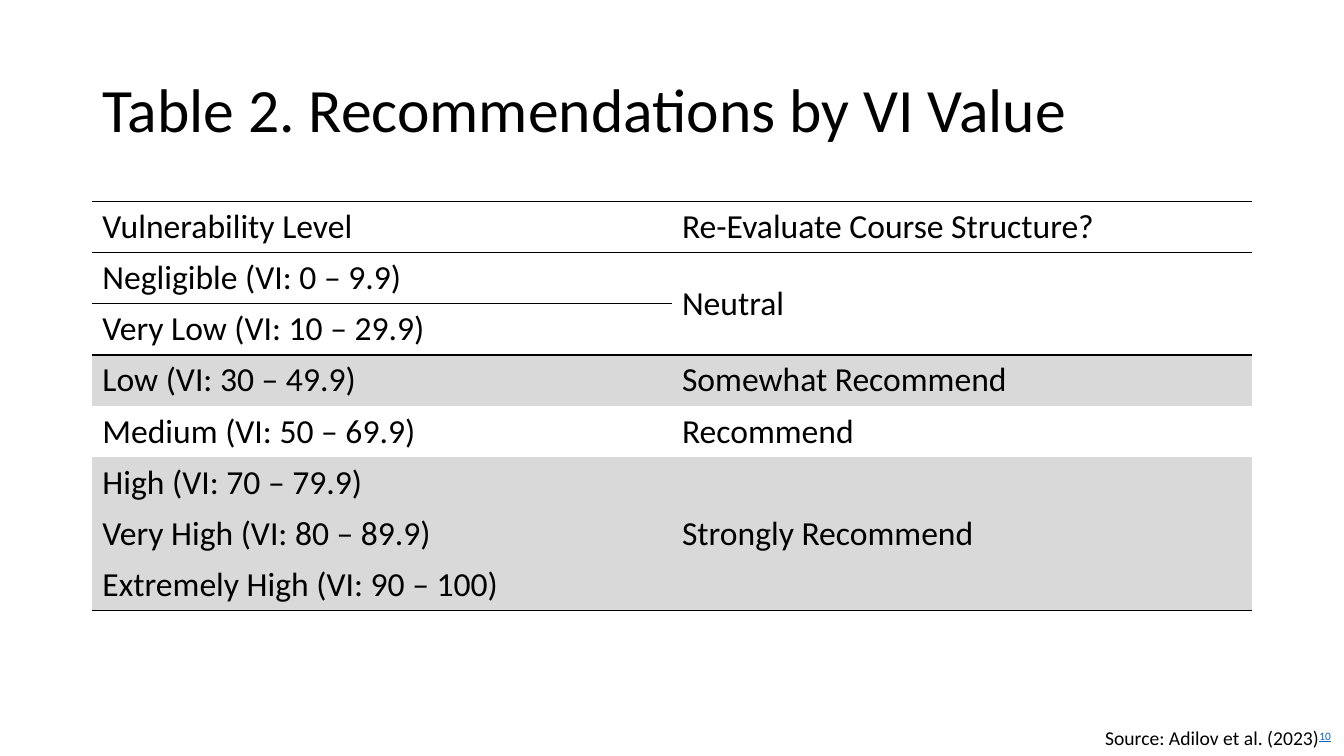
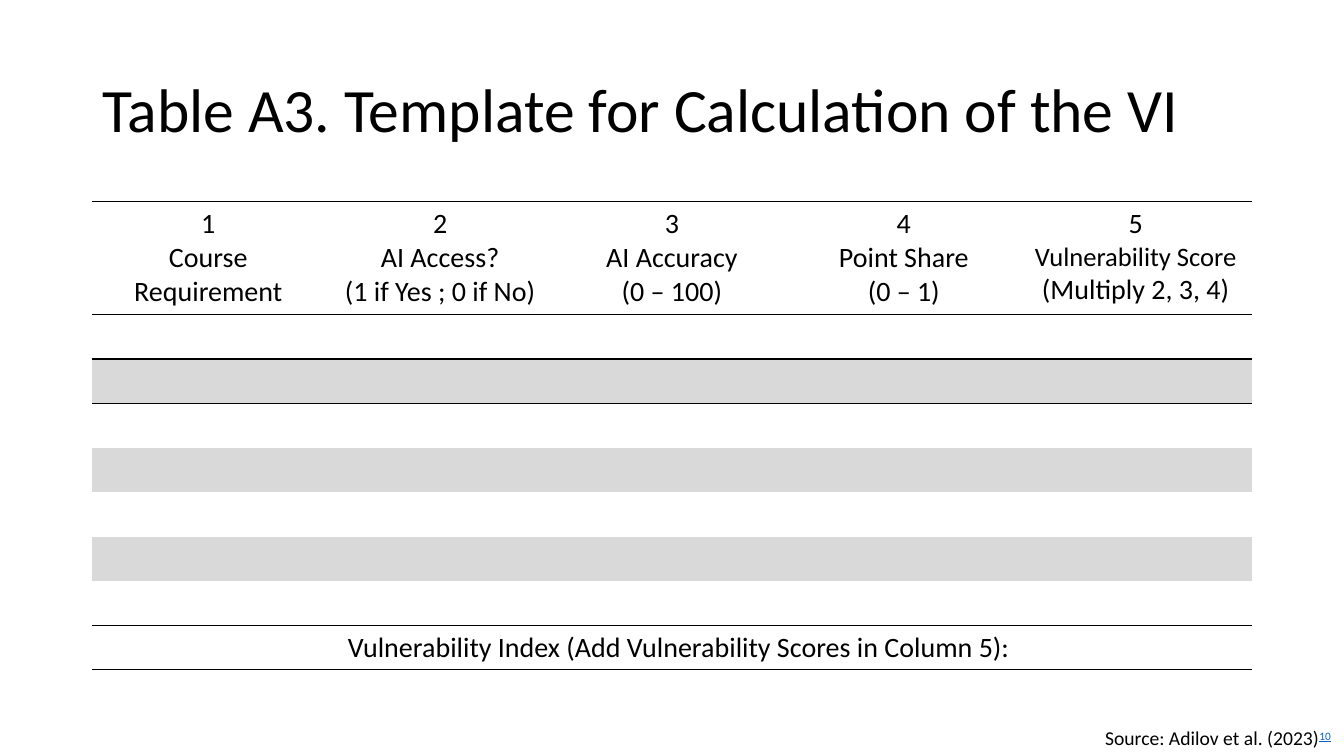
import lxml.etree
import pptx
import pptx.dml.color
import pptx.enum.text
import pptx.oxml.ns
import pptx.util

PX = 9525
BLACK = pptx.dml.color.RGBColor(0x00, 0x00, 0x00)
GREY = pptx.dml.color.RGBColor(0xD9, 0xD9, 0xD9)
BLUE = pptx.dml.color.RGBColor(0x05, 0x63, 0xC1)
FONT = "Calibri"
PLAIN_STYLE = "{2D5ABB26-0587-4C30-8999-92F81FD0307C}"
ALIGN = pptx.enum.text.PP_ALIGN
MIDDLE = pptx.enum.text.MSO_ANCHOR.MIDDLE
FIT = pptx.enum.text.MSO_AUTO_SIZE

TITLE_BOX = (88, 38, 1104, 139)
TABLE_LEFT, TABLE_TOP, TABLE_WIDTH = 88, 192, 1104
SOURCE_BOX = (1043, 687, 238, 33)

LEVELS = [
    ("Vulnerability Level", "Re-Evaluate Course Structure?"),
    ("Negligible (VI: 0 – 9.9)", "Neutral"),
    ("Very Low (VI: 10 – 29.9)", ""),
    ("Low (VI: 30 – 49.9)", "Somewhat Recommend"),
    ("Medium (VI: 50 – 69.9)", "Recommend"),
    ("High (VI: 70 – 79.9)", "Strongly Recommend"),
    ("Very High (VI: 80 – 89.9)", ""),
    ("Extremely High (VI: 90 – 100)", ""),
]
HEADS = (
    "1\nCourse Requirement",
    "2\nAI Access?\n(1 if Yes ; 0 if No)",
    "3\nAI Accuracy\n(0 – 100)",
    "4\nPoint Share\n(0 – 1)",
    "5\nVulnerability Score ",
)
BLANK = ("",) * len(HEADS)
TOTAL = ("Vulnerability Index (Add Vulnerability Scores in Column 5):",) + BLANK[1:]


def scale(box):
    return [n * PX for n in box]


def style(para, size, align=ALIGN.LEFT):
    para.alignment = align
    font = para.font
    font.name = FONT
    font.size = pptx.util.Pt(size)
    font.color.rgb = BLACK


def add_title(slide, box, text):
    title = slide.shapes.title
    title.left, title.top, title.width, title.height = scale(box)
    frame = title.text_frame
    frame.text = text
    frame.auto_size = FIT.NONE
    frame.vertical_anchor = MIDDLE
    para = frame.paragraphs[0]
    para.line_spacing = 0.9
    style(para, 44)


def add_source(slide, box):
    frame = slide.shapes.add_textbox(*scale(box)).text_frame
    frame.word_wrap = False
    frame.auto_size = FIT.SHAPE_TO_FIT_TEXT
    para = frame.paragraphs[0]
    style(para, 14)
    para.add_run().text = "Source: Adilov et al. (2023)"
    note = para.add_run()
    note.text = "10"
    note.font.underline = True
    note.font.color.rgb = BLUE
    note.font._element.set("baseline", "30000")


def add_rule(cell, side):
    """Draw a black 1 pt border; side is lnT or lnB."""
    name = pptx.oxml.ns.qn
    props = cell._tc.get_or_add_tcPr()
    line = lxml.etree.SubElement(props, name("a:" + side), w=str(pptx.util.Pt(1)))
    fill = lxml.etree.SubElement(line, name("a:solidFill"))
    lxml.etree.SubElement(fill, name("a:srgbClr"), val=str(BLACK))


def add_table(slide, box, rows, heights, size, align, shaded, ruled, merges):
    """Fill a grid; shaded rows are grey, ruled rows have a line below."""
    left, top, width = scale(box)
    count = len(rows[0])
    table = slide.shapes.add_table(
        len(rows), count, left, top, width, sum(heights) * PX).table
    table.first_row = table.horz_banding = False
    table._tbl.tblPr.find(pptx.oxml.ns.qn("a:tableStyleId")).text = PLAIN_STYLE
    for col in table.columns:
        col.width = width // count
    for row, height in zip(table.rows, heights):
        row.height = height * PX
    for first, last in merges:
        table.cell(*first).merge(table.cell(*last))
    for r, texts in enumerate(rows):
        for c, text in enumerate(texts):
            cell = table.cell(r, c)
            cell.text = text
            for para in cell.text_frame.paragraphs:
                style(para, size, align)
            tall = cell.span_height if cell.is_merge_origin else 1
            if tall > 1:
                cell.vertical_anchor = MIDDLE
            if r == 0 or r - 1 in ruled and not cell.is_spanned:
                add_rule(cell, "lnT")
            if r in ruled or r + tall - 1 in ruled:
                add_rule(cell, "lnB")
            if r in shaded:
                cell.fill.solid()
                cell.fill.fore_color.rgb = GREY
            else:
                cell.fill.background()
    return table


def add_slide(deck, title):
    slide = deck.slides.add_slide(deck.slide_layouts[5])
    add_title(slide, TITLE_BOX, title)
    return slide


def add_advice(deck):
    slide = add_slide(deck, "Table 2. Recommendations by VI Value")
    add_table(
        slide, (TABLE_LEFT, TABLE_TOP, TABLE_WIDTH), LEVELS, [48] * len(LEVELS),
        24, ALIGN.LEFT, shaded={3, 5, 6, 7}, ruled={0, 1, 7},
        merges=[((1, 1), (2, 1)), ((5, 1), (7, 1))])
    add_source(slide, SOURCE_BOX)


def add_form(deck):
    slide = add_slide(deck, "Table A3. Template for Calculation of the VI")
    rows = [HEADS] + [BLANK] * 7 + [TOTAL]
    table = add_table(
        slide, (TABLE_LEFT, TABLE_TOP, TABLE_WIDTH), rows, [107] + [42] * 8,
        20, ALIGN.CENTER, shaded={2, 4, 6}, ruled={0, 1, 7, 8},
        merges=[((8, 0), (8, 3))])
    score = table.cell(0, 4).text_frame.paragraphs[1]
    score.runs[0].font.size = pptx.util.Pt(19)
    score.add_run().text = "(Multiply 2, 3, 4)"
    table.cell(8, 0).text_frame.paragraphs[0].alignment = ALIGN.RIGHT
    add_source(slide, SOURCE_BOX)


def main():
    deck = pptx.Presentation()
    deck.slide_width, deck.slide_height = scale((1280, 720))
    add_advice(deck)
    add_form(deck)
    deck.save("out.pptx")


if __name__ == "__main__":
    main()
